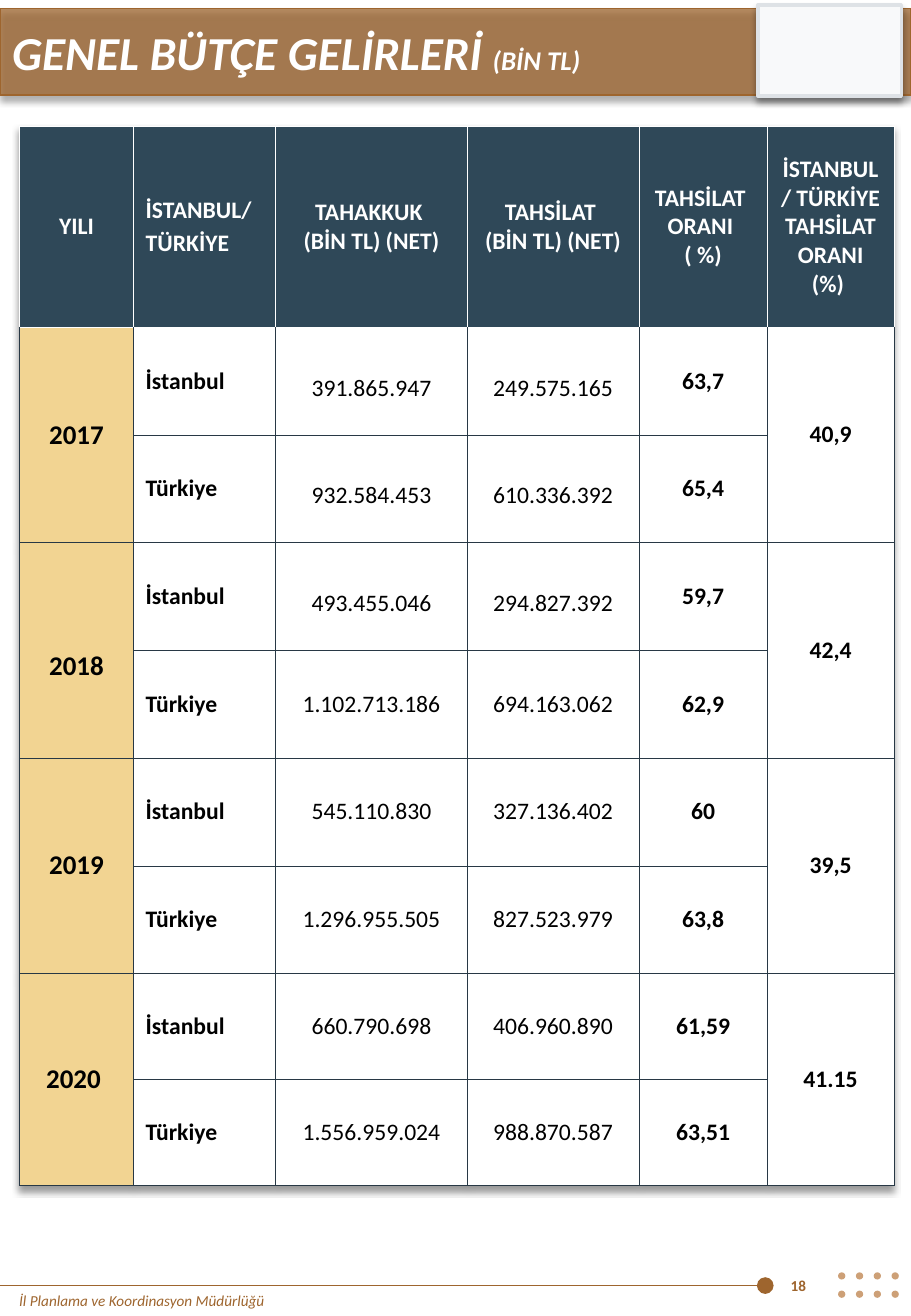
import pptx
import pptx.dml.color
import pptx.enum.shapes
import pptx.enum.text
import pptx.oxml
import pptx.oxml.ns
import pptx.util

W, H = pptx.util.Inches(7.5), pptx.util.Inches(10.83)
NS = pptx.oxml.ns.nsdecls("a")
SHAPE = pptx.enum.shapes.MSO_SHAPE
ALIGN = pptx.enum.text.PP_ALIGN
MIDDLE = pptx.enum.text.MSO_ANCHOR.MIDDLE
FONT = "Calibri"
BROWN, DOT, WHITE, BLACK = "9E652E", "CDA077", "FFFFFF", "000000"
NAVY, SAND, BORDER = "2F4858", "F2D492", "283845"

COLUMNS = [12.53, 15.6, 21.07, 18.8, 14.13, 13.87]
ROWS = [15.25] + [8.19] * 6 + [8.06] * 2
HEADERS = [
    "YILI",
    "İSTANBUL/\nTÜRKİYE",
    "TAHAKKUK \n(BİN TL) (NET)",
    "TAHSİLAT \n(BİN TL) (NET)",
    "TAHSİLAT \nORANI \n( %)",
    "İSTANBUL/ TÜRKİYE TAHSİLAT ORANI (%) ",
]
YEARS = [
    ("2017", "40,9"),
    ("2018", "42,4"),
    ("2019", "39,5"),
    ("2020 ", "41.15"),
]
REVENUES = [
    ("İstanbul", "391.865.947", "249.575.165", "63,7"),
    ("Türkiye", "932.584.453", "610.336.392", "65,4"),
    ("İstanbul", "493.455.046", "294.827.392", "59,7"),
    ("Türkiye", "1.102.713.186", "694.163.062", "62,9"),
    ("İstanbul", "545.110.830", "327.136.402", "60"),
    ("Türkiye", "1.296.955.505", "827.523.979", "63,8"),
    ("İstanbul", "660.790.698", "406.960.890", "61,59"),
    ("Türkiye", "1.556.959.024", "988.870.587", "63,51"),
]
TALL_LINE_ROWS = 3


def color(value):
    return pptx.dml.color.RGBColor.from_string(value)


def across(percent):
    return round(W * percent / 100)


def down(percent):
    return round(H * percent / 100)


def area(left, top, width, height):
    return across(left), down(top), across(width), down(height)


def shadow_effect():
    return pptx.oxml.parse_xml(
        f'<a:effectLst {NS}><a:outerShdw blurRad="50800" dist="38100" dir="5400000" '
        'algn="t" rotWithShape="0"><a:srgbClr val="000000"><a:alpha val="40000"/>'
        "</a:srgbClr></a:outerShdw></a:effectLst>")


def format_run(r, size, hue, bold=False, italic=False):
    r.font.name, r.font.size = FONT, pptx.util.Pt(size)
    r.font.bold, r.font.italic = bold, italic
    r.font.color.rgb = color(hue)


def add_panel(s, box, fill, line=None, width=1, kind=SHAPE.RECTANGLE):
    sp = s.shapes.add_shape(kind, *box)
    sp.shadow.inherit = False
    sp.fill.solid()
    sp.fill.fore_color.rgb = color(fill)
    if line is None:
        sp.line.fill.background()
    else:
        sp.line.color.rgb = color(line)
        sp.line.width = pptx.util.Pt(width)
    return sp


def add_shadow(sp):
    props = sp.element.spPr
    props.remove(props.find(pptx.oxml.ns.qn("a:effectLst")))
    props.append(shadow_effect())


def add_header(s):
    banner = add_panel(s, area(0, 0.65, 100, 6.56), BROWN, BROWN)
    hue = banner.element.spPr.find(pptx.oxml.ns.qn("a:solidFill"))[0]
    hue.append(pptx.oxml.parse_xml(f'<a:alpha {NS} val="75000"/>'))
    add_shadow(banner)
    add_shadow(add_panel(s, area(83.2, 0.37, 15.73, 6.93), "F8F9FA", "DEE2E6", 2))


def add_title(s):
    title = s.shapes.title
    title.left, title.top, title.width, title.height = area(0, 1.29, 100, 5.26)
    title.element.getparent().append(title.element)
    tf = title.text_frame
    tf.word_wrap, tf.vertical_anchor = True, MIDDLE
    tf.auto_size = pptx.enum.text.MSO_AUTO_SIZE.NONE
    p = tf.paragraphs[0]
    p.alignment, p.space_before, p.line_spacing = ALIGN.LEFT, pptx.util.Pt(0), 1.0
    for text, size in (("GENEL BÜTÇE GELİRLERİ ", 28), ("(BİN TL)", 16)):
        r = p.add_run()
        r.text = text
        format_run(r, size, WHITE, True, True)


def add_label(s, box, text, bold=False, italic=False):
    tf = s.shapes.add_textbox(*box).text_frame
    tf.word_wrap, tf.vertical_anchor = True, MIDDLE
    tf.text = text
    format_run(tf.paragraphs[0].runs[0], 9, BROWN, bold, italic)


def add_footer(s):
    y = down(97.69)
    rule = s.shapes.add_connector(
        pptx.enum.shapes.MSO_CONNECTOR.STRAIGHT, across(84), y, 0, y)
    rule.line.color.rgb = color(BROWN)
    rule.line.width = pptx.util.Pt(0.5)
    rule.line._get_or_add_ln().append(
        pptx.oxml.parse_xml(f'<a:headEnd {NS} type="oval" w="lg" len="lg"/>'))
    rule.element.spPr.append(pptx.oxml.parse_xml(f"<a:effectLst {NS}/>"))
    for row in range(2):
        for column in range(4):
            box = area(92 + column * 5.87 / 3, 96.68 + row * 1.39, 0.8, 0.55)
            add_panel(s, box, DOT, kind=SHAPE.OVAL)
    add_label(s, area(0.8, 97.69, 62.53, 2.31),
              "İl Planlama ve Koordinasyon Müdürlüğü", italic=True)
    add_label(s, area(85.47, 95.75, 6.67, 3.88), "18", bold=True)


def style_cell(cell, fill, border, top):
    props = cell._tc.get_or_add_tcPr()
    for side, hue in zip("LRTB", (border, border, top, border)):
        props.append(pptx.oxml.parse_xml(
            f'<a:ln{side} {NS} w="3175"><a:solidFill><a:srgbClr val="{hue}"/>'
            f"</a:solidFill></a:ln{side}>"))
    cell.fill.solid()
    cell.fill.fore_color.rgb = color(fill)


def fill_cell(cell, text, size=14, hue=BLACK, bold=True, align=ALIGN.CENTER, side=0.1):
    cell.vertical_anchor = MIDDLE
    cell.margin_left = cell.margin_right = pptx.util.Inches(side)
    cell.margin_top = cell.margin_bottom = pptx.util.Inches(0.05 if side == 0.1 else 0)
    cell.text_frame.text = text
    for p in cell.text_frame.paragraphs:
        p.alignment = align
        for r in p.runs:
            format_run(r, size, hue, bold)


def add_revenue_table(s):
    frame = s.shapes.add_table(len(ROWS), len(COLUMNS),
                               *area(2.13, 9.6, sum(COLUMNS), sum(ROWS)))
    table = frame.table
    table.first_row = table.horz_banding = False
    table._tbl.tblPr.insert(0, shadow_effect())
    for column, share in zip(table.columns, COLUMNS):
        column.width = across(share)
    for i, share in enumerate(ROWS):
        table.rows[i].height = down(share)
        for j in range(len(COLUMNS)):
            fill = NAVY if i == 0 else SAND if j == 0 else WHITE
            style_cell(table.cell(i, j), fill, BORDER if i else WHITE,
                       BORDER if i > 1 else WHITE)

    for j, text in enumerate(HEADERS):
        fill_cell(table.cell(0, j), text, hue=WHITE,
                  align=ALIGN.LEFT if j == 1 else ALIGN.CENTER)
    table.cell(0, 1).text_frame.paragraphs[1].space_before = pptx.util.Pt(2.8)

    for i, (region, accrued, collected, rate) in enumerate(REVENUES, 1):
        fill_cell(table.cell(i, 1), region, align=ALIGN.LEFT)
        for j, amount in ((2, accrued), (3, collected)):
            fill_cell(table.cell(i, j), amount, bold=False, side=0.07)
            if i <= TALL_LINE_ROWS:
                table.cell(i, j).text_frame.paragraphs[0].line_spacing = 1.5
        fill_cell(table.cell(i, 4), rate, side=0.01)

    for i, (year, share) in enumerate(YEARS):
        first = 1 + 2 * i
        for j in (0, 5):
            table.cell(first, j).merge(table.cell(first + 1, j))
        fill_cell(table.cell(first, 0), year, size=16)
        fill_cell(table.cell(first, 5), share, side=0.01)
    table.cell(3, 0).margin_top = pptx.util.Inches(0.31)


def main():
    prs = pptx.Presentation()
    prs.slide_width, prs.slide_height = W, H
    s = prs.slides.add_slide(prs.slide_layouts[5])
    add_header(s)
    add_footer(s)
    add_title(s)
    add_revenue_table(s)
    prs.save("out.pptx")


if __name__ == "__main__":
    main()
